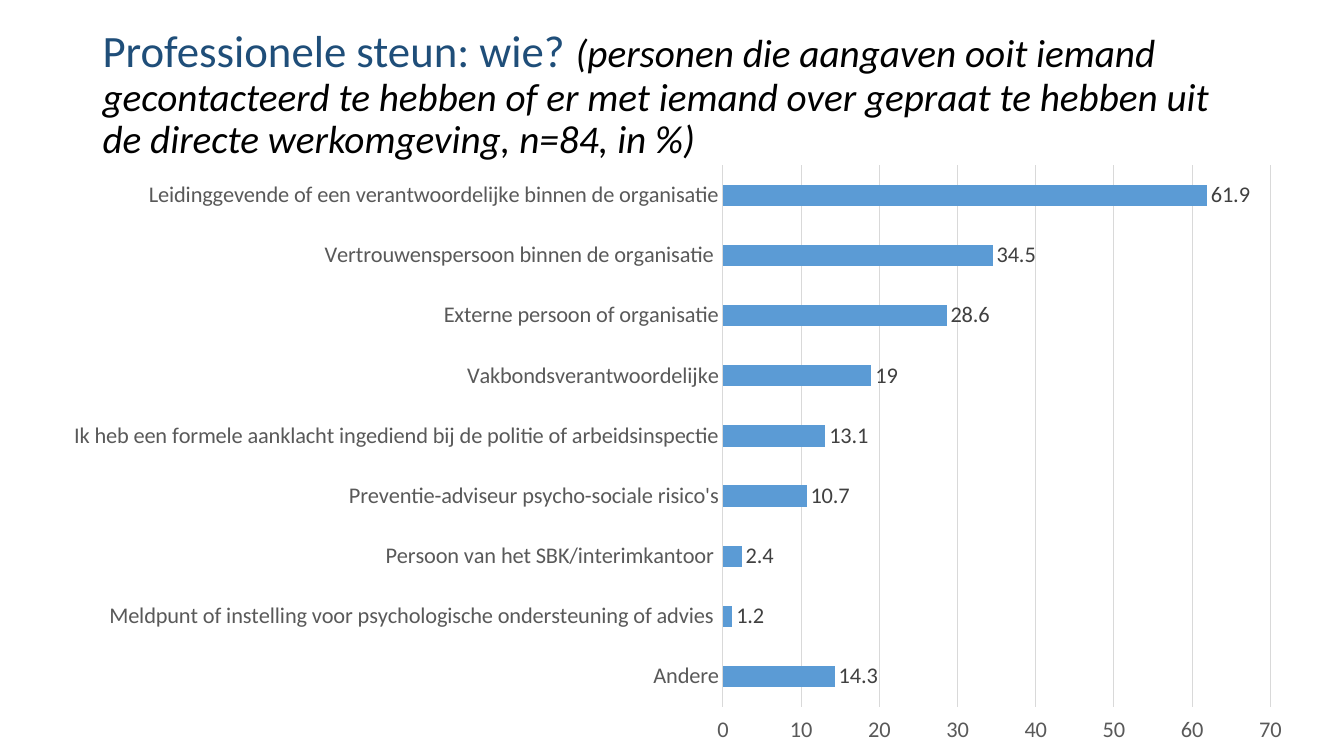
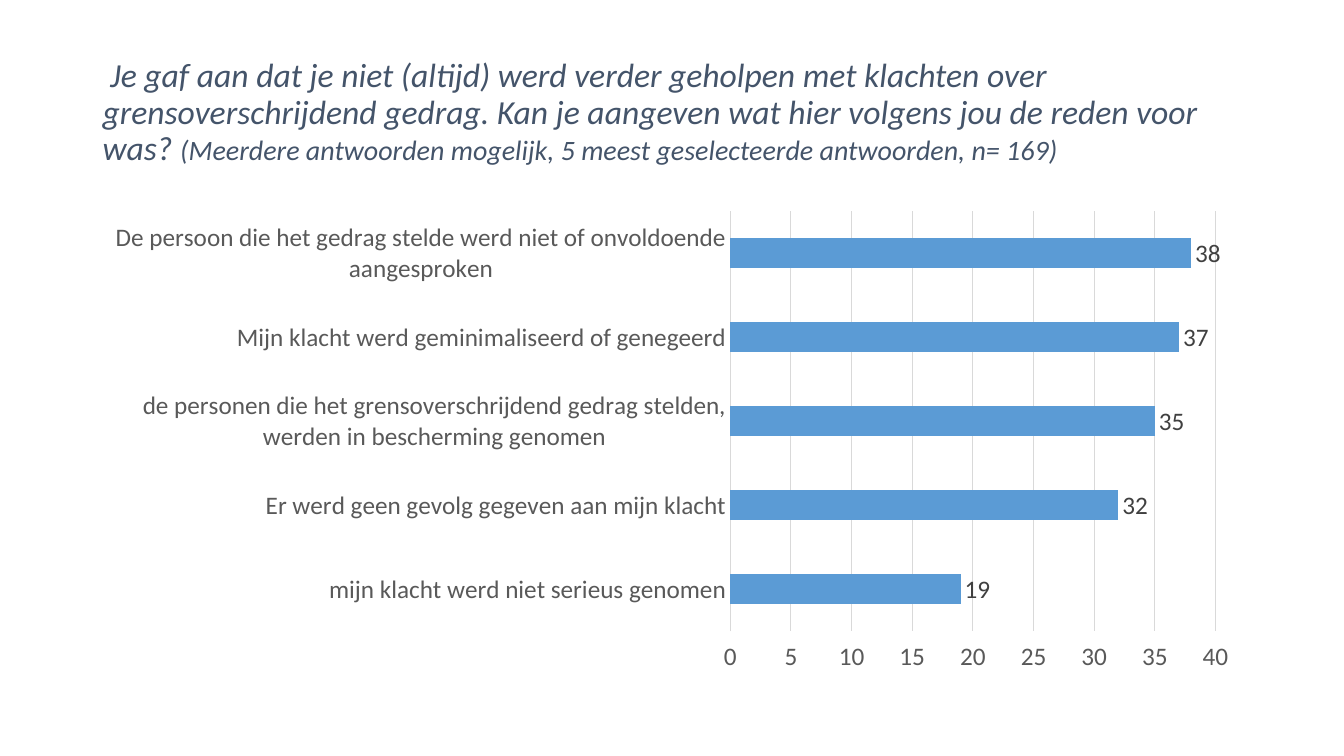
from pptx import Presentation
from pptx.chart.data import CategoryChartData
from pptx.dml.color import RGBColor
from pptx.enum.chart import XL_CHART_TYPE, XL_LABEL_POSITION, XL_TICK_LABEL_POSITION, XL_TICK_MARK
from pptx.enum.text import MSO_ANCHOR, MSO_AUTO_SIZE, PP_ALIGN
from pptx.util import Cm, Pt

BAR_CLUSTERED = XL_CHART_TYPE.BAR_CLUSTERED
OUTSIDE_END = XL_LABEL_POSITION.OUTSIDE_END
HIGH = XL_TICK_LABEL_POSITION.HIGH
NO_TICK = XL_TICK_MARK.NONE
MIDDLE = MSO_ANCHOR.MIDDLE
NO_AUTOFIT = MSO_AUTO_SIZE.NONE
LEFT = PP_ALIGN.LEFT

FONT = "Calibri"
BLUE_TITLE = "1F4E79"
SLATE = "44546A"
BLACK = "000000"
BAR_BLUE = "5B9BD5"
GRID_GREY = "D9D9D9"
AXIS_GREY = "595959"
LABEL_GREY = "404040"

TITLE_LEFT, TITLE_WIDTH = 2.33, 29.21

SLIDES = [
    {
        "title": [
            ("Professionele steun: wie? ", 32, BLUE_TITLE, False),
            ("(personen die aangaven ooit iemand gecontacteerd te hebben of er met "
             "iemand over gepraat te hebben uit de directe werkomgeving, n=84, in %)",
             28, BLACK, True),
        ],
        "title_top": 0.6,
        "title_height": 3.61,
        "chart_area": (1.23, 3.86, 31.7, 15.19),
        "size": 16,
        "format": "General",
        "axis_max": 70,
        "axis_step": 10,
        "answers": [
            ("Leidinggevende of een verantwoordelijke binnen de organisatie", 61.9),
            ("Vertrouwenspersoon binnen de organisatie ", 34.5),
            ("Externe persoon of organisatie", 28.6),
            ("Vakbondsverantwoordelijke", 19),
            ("Ik heb een formele aanklacht ingediend bij de politie of arbeidsinspectie", 13.1),
            ("Preventie-adviseur psycho-sociale risico's", 10.7),
            ("Persoon van het SBK/interimkantoor ", 2.4),
            ("Meldpunt of instelling voor psychologische ondersteuning of advies ", 1.2),
            ("Andere", 14.3),
        ],
    },
    {
        "title": [
            (" Je gaf aan dat je niet (altijd) werd verder geholpen met klachten over "
             "grensoverschrijdend gedrag. Kan je aangeven wat hier volgens jou de reden "
             "voor was? ", 24, SLATE, True),
            ("(Meerdere antwoorden mogelijk, 5 meest geselecteerde antwoorden, n= 169)",
             20, SLATE, True),
        ],
        "title_top": 1.01,
        "title_height": 3.68,
        "chart_area": (2.33, 5.08, 29.21, 12.09),
        "size": 18,
        "format": "0",
        "axis_max": 40,
        "axis_step": 5,
        "answers": [
            ("De persoon die het gedrag stelde werd niet of onvoldoende aangesproken", 38),
            ("Mijn klacht werd geminimaliseerd of genegeerd", 37),
            ("de personen die het grensoverschrijdend gedrag stelden, "
             "werden in bescherming genomen", 35),
            ("Er werd geen gevolg gegeven aan mijn klacht", 32),
            ("mijn klacht werd niet serieus genomen", 19),
        ],
    },
]


def color(hex_text):
    return RGBColor.from_string(hex_text)


def style_font(font, size, hex_text, italic=False):
    font.name = FONT
    font.size = Pt(size)
    font.color.rgb = color(hex_text)
    font.bold = False
    font.italic = italic


def style_line(line):
    line.color.rgb = color(GRID_GREY)
    line.width = Pt(0.75)


def fill_title(page, content):
    title = page.shapes.title
    title.left, title.width = Cm(TITLE_LEFT), Cm(TITLE_WIDTH)
    title.top, title.height = Cm(content["title_top"]), Cm(content["title_height"])
    frame = title.text_frame
    frame.word_wrap = True
    frame.auto_size = NO_AUTOFIT
    frame.vertical_anchor = MIDDLE
    para = frame.paragraphs[0]
    para.alignment = LEFT
    para.line_spacing = 0.9
    for text, size, hex_text, italic in content["title"]:
        span = para.add_run()
        span.text = text
        style_font(span.font, size, hex_text, italic)


def add_bar_chart(page, content):
    size = content["size"]
    categories, values = zip(*content["answers"])
    data = CategoryChartData(number_format=content["format"])
    data.categories = categories
    data.add_series("Series 1", values)
    area = [Cm(length) for length in content["chart_area"]]
    chart = page.shapes.add_chart(BAR_CLUSTERED, *area, data).chart
    chart.has_title = False
    chart.has_legend = False
    style_font(chart.font, size, BLACK)

    for axis in (chart.category_axis, chart.value_axis):
        axis.major_tick_mark = NO_TICK
        axis.minor_tick_mark = NO_TICK
        style_font(axis.tick_labels.font, size, AXIS_GREY)

    answer_axis = chart.category_axis
    answer_axis.reverse_order = True
    answer_axis.has_major_gridlines = False
    style_line(answer_axis.format.line)

    percent_axis = chart.value_axis
    percent_axis.minimum_scale = 0
    percent_axis.maximum_scale = content["axis_max"]
    percent_axis.major_unit = content["axis_step"]
    percent_axis.tick_label_position = HIGH
    percent_axis.tick_labels.number_format = content["format"]
    percent_axis.tick_labels.number_format_is_linked = False
    percent_axis.format.line.fill.background()
    percent_axis.has_major_gridlines = True
    style_line(percent_axis.major_gridlines.format.line)

    plot = chart.plots[0]
    plot.gap_width = 182
    plot.vary_by_categories = False
    bars = plot.series[0]
    bars.invert_if_negative = False
    bars.format.fill.solid()
    bars.format.fill.fore_color.rgb = color(BAR_BLUE)

    labels = bars.data_labels
    labels.show_value = True
    labels.position = OUTSIDE_END
    labels.number_format = content["format"]
    labels.number_format_is_linked = False
    style_font(labels.font, size, LABEL_GREY)


def main():
    deck = Presentation()
    deck.slide_width, deck.slide_height = Cm(33.87), Cm(19.05)
    title_only = deck.slide_layouts[5]
    for content in SLIDES:
        page = deck.slides.add_slide(title_only)
        fill_title(page, content)
        add_bar_chart(page, content)
    deck.save("out.pptx")


if __name__ == "__main__":
    main()
